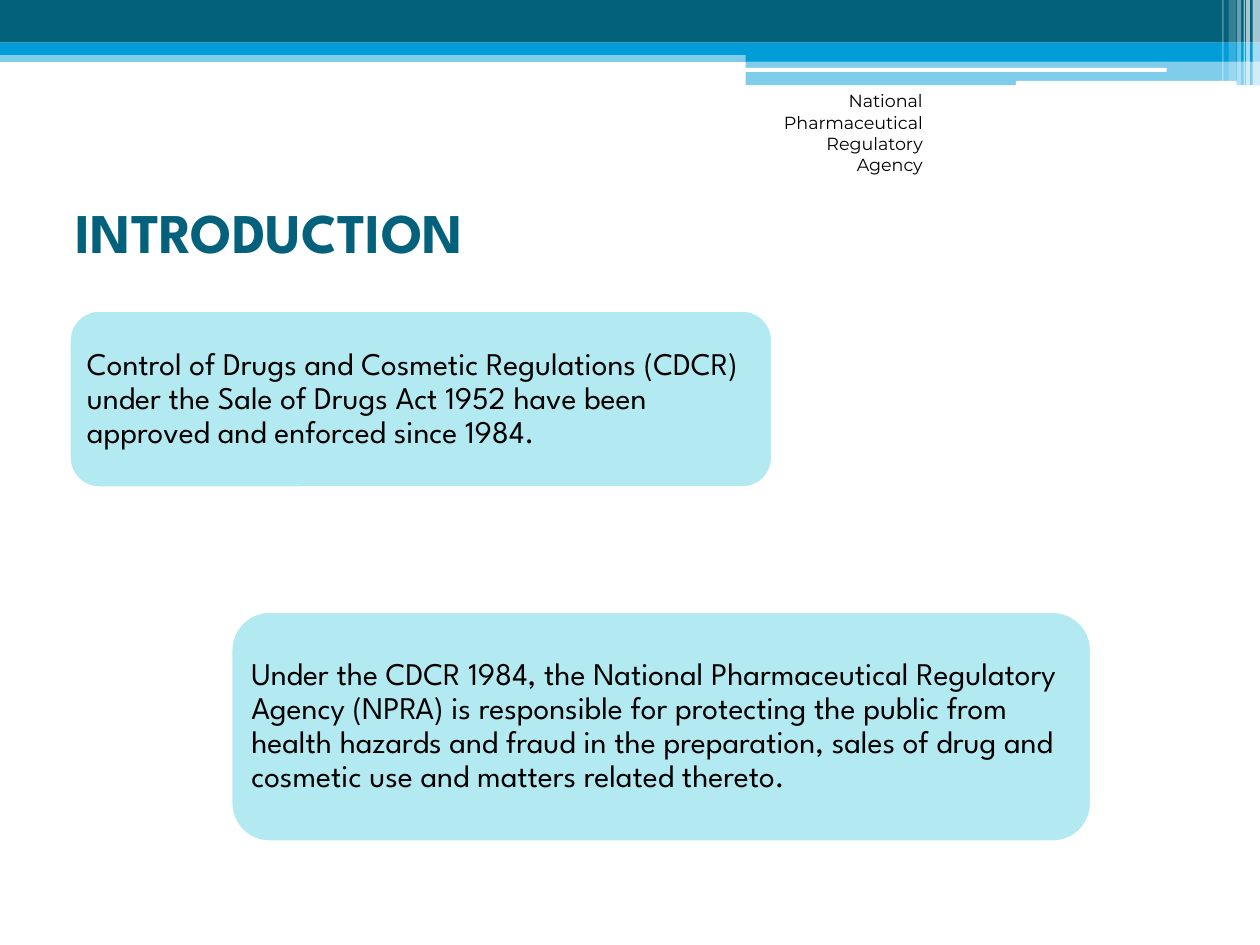
from lxml import etree
from pptx import Presentation
from pptx.dml.color import RGBColor
from pptx.enum import shapes, text
from pptx.oxml.ns import qn
from pptx.util import Cm, Pt

TEAL, BLUE, WHITE, BLACK, PALE = "04617B", "009DD9", "FFFFFF", "000000", "B3EAF2"
HEADING_FONT, AGENCY_FONT = "League Spartan", "Montserrat"
WIDTH, HEIGHT = 25.4, 19.05
RECTANGLE = shapes.MSO_SHAPE.RECTANGLE
ROUNDED = shapes.MSO_SHAPE.ROUNDED_RECTANGLE

# Content; all lengths are in centimetres
TITLE = "INTRODUCTION"
AGENCY = ["National", "Pharmaceutical Regulatory", "Agency"]
CARDS = [
    ((1.4, 6.26, 14.17, 3.57),
     "Control of Drugs and Cosmetic Regulations (CDCR) under the Sale of Drugs "
     "Act 1952 have been approved and enforced since 1984."),
    ((4.66, 12.33, 17.34, 4.64),
     "Under the CDCR 1984, the National Pharmaceutical Regulatory Agency (NPRA) "
     "is responsible for protecting the public from health hazards and fraud in "
     "the preparation, sales of drug and cosmetic use and matters related thereto."),
]

# Header bands: kind, box, colour, opacity in percent
BANDS = [
    (RECTANGLE, (0, 1.02, WIDTH, 0.23), BLUE, 50),
    (RECTANGLE, (0, 0, WIDTH, 0.86), TEAL, 100),
    (RECTANGLE, (0, 0.86, WIDTH, 0.25), BLUE, 100),
    (RECTANGLE, (15.03, 0.99, 10.37, 0.25), BLUE, 100),
    (RECTANGLE, (15.03, 1.23, 10.37, 0.49), BLUE, 50),
    (ROUNDED, (15.01, 1.37, 8.51, 0.08), WHITE, 100),
    (ROUNDED, (20.48, 1.63, 4.45, 0.1), WHITE, 100),
]
# White stripes at the right end: left, width, height, opacity
STRIPES = [
    (25.25, 0.15, 1.72, 65), (25.12, 0.08, 1.72, 65), (25.07, 0.03, 1.72, 60),
    (24.94, 0.08, 1.72, 40), (24.77, 0.15, 1.63, 20), (24.64, 0.03, 1.63, 30),
]


def color(value):
    return RGBColor.from_string(value)


def add_block(slide, kind, box, fill, opacity=100):
    shape = slide.shapes.add_shape(kind, *map(Cm, box))
    shape.shadow.inherit = False
    shape.fill.solid()
    shape.fill.fore_color.rgb = color(fill)
    shape.line.fill.background()
    if opacity < 100:
        rgb = shape.fill._xPr.find(".//" + qn("a:srgbClr"))
        etree.SubElement(rgb, qn("a:alpha"), val=str(opacity * 1000))
    return shape


def format_text(frame, font, size, fill, align, bold=False):
    frame.word_wrap = True
    frame.auto_size = text.MSO_AUTO_SIZE.NONE
    for paragraph in frame.paragraphs:
        paragraph.alignment = align
        for run in paragraph.runs:
            run.font.name = font
            run.font.size = Pt(size)
            run.font.bold = bold
            run.font.color.rgb = color(fill)


def add_card(slide, box, words):
    card = add_block(slide, ROUNDED, box, PALE)
    card.line.color.rgb = color(WHITE)
    card.line.width = Pt(1.5)
    frame = card.text_frame
    frame.text = words
    frame.vertical_anchor = text.MSO_ANCHOR.MIDDLE
    frame.margin_left = frame.margin_right = Cm(0.18)
    frame.margin_top = frame.margin_bottom = Cm(0.18)
    frame.paragraphs[0].line_spacing = 0.9
    format_text(frame, HEADING_FONT, 18, BLACK, text.PP_ALIGN.LEFT)


def main():
    presentation = Presentation()
    presentation.slide_width, presentation.slide_height = Cm(WIDTH), Cm(HEIGHT)
    slide = presentation.slides.add_slide(presentation.slide_layouts[5])

    # Header
    for band in BANDS:
        add_block(slide, *band)
    for left, width, height, opacity in STRIPES:
        add_block(slide, RECTANGLE, (left, 0, width, height), WHITE, opacity)

    # Agency name
    agency = slide.shapes.add_textbox(Cm(14.61), Cm(1.7), Cm(4.24), Cm(1.27))
    agency.text_frame.text = "\n".join(AGENCY)
    format_text(agency.text_frame, AGENCY_FONT, 10, BLACK, text.PP_ALIGN.RIGHT)

    # Title
    title = slide.shapes.title
    title.left, title.top, title.width, title.height = map(Cm, (1.27, 3.18, 22.86, 2.97))
    title.text_frame.text = TITLE
    title.text_frame.vertical_anchor = text.MSO_ANCHOR.MIDDLE
    format_text(title.text_frame, HEADING_FONT, 32, TEAL, text.PP_ALIGN.LEFT, bold=True)

    # Cards
    for box, words in CARDS:
        add_card(slide, box, words)

    presentation.save("out.pptx")


if __name__ == "__main__":
    main()
